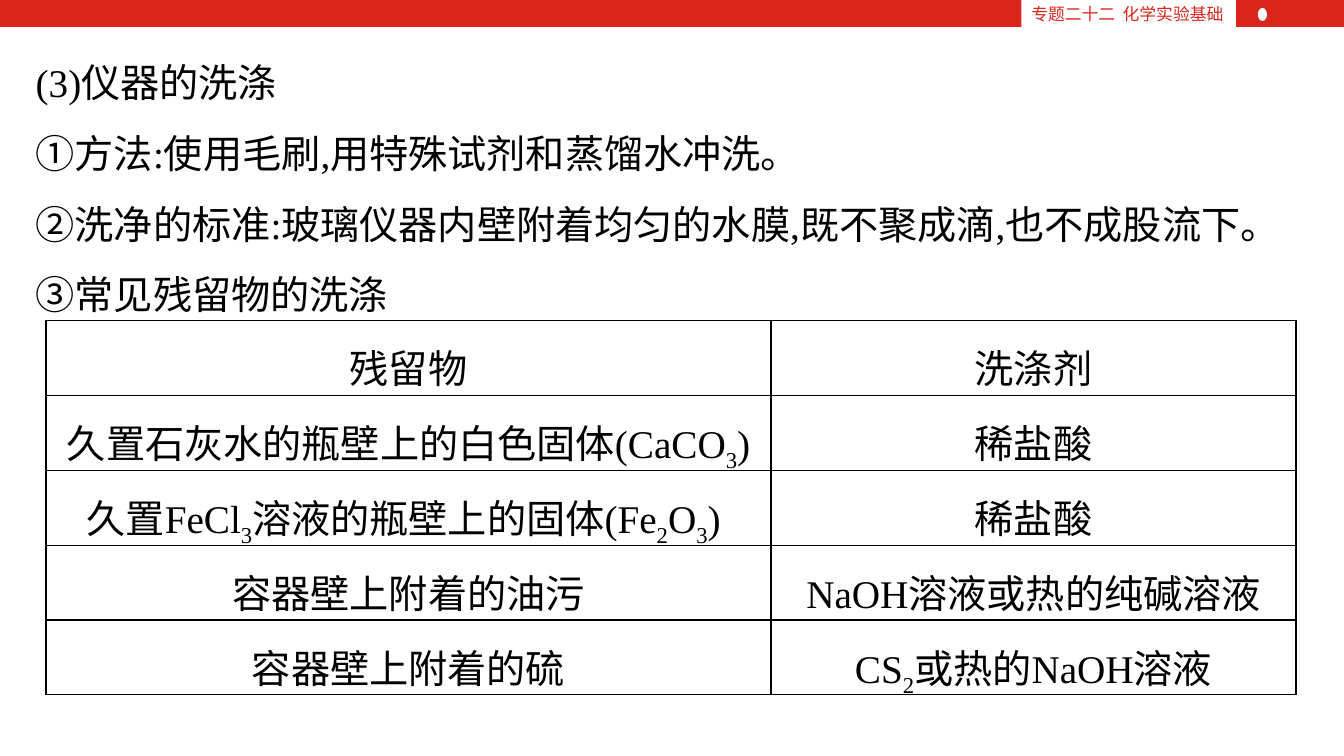
from dataclasses import dataclass
from itertools import groupby

from lxml import etree
from pptx import Presentation
from pptx.dml.color import RGBColor
from pptx.enum.shapes import MSO_SHAPE
from pptx.enum.text import MSO_ANCHOR, MSO_AUTO_SIZE, PP_ALIGN
from pptx.oxml.ns import qn
from pptx.util import Cm, Pt

RECTANGLE = MSO_SHAPE.RECTANGLE
OVAL = MSO_SHAPE.OVAL
MIDDLE = MSO_ANCHOR.MIDDLE
CENTER = PP_ALIGN.CENTER
LEFT = PP_ALIGN.LEFT
GROW = MSO_AUTO_SIZE.SHAPE_TO_FIT_TEXT

FONT = "Times New Roman"
RED = "DA251C"
WHITE = "FFFFFF"
BLACK = "000000"
BODY_SIZE = 28
PAGE_WIDTH = 33.87
PAGE_HEIGHT = 19.05
BAR_HEIGHT = 0.68
COLUMN_WIDTHS = (18.27, 13.23)
TABLE_HEIGHT = 9.43
BORDERS = ("a:lnL", "a:lnR", "a:lnT", "a:lnB")


@dataclass(frozen=True)
class HeaderShape:
    left: float
    top: float
    width: float
    height: float
    color: str
    kind: MSO_SHAPE = RECTANGLE
    label: str = ""


@dataclass(frozen=True)
class Residue:
    name: str
    cleaner: str


HEADER = (
    HeaderShape(0, 0, PAGE_WIDTH, BAR_HEIGHT, RED),
    HeaderShape(31.7, 0.2, 0.23, 0.33, WHITE, OVAL),
    HeaderShape(25.74, 0, 5.41, BAR_HEIGHT, WHITE, label="专题二十二  化学实验基础"),
)
NOTES = (
    "(3)仪器的洗涤",
    "①方法:使用毛刷,用特殊试剂和蒸馏水冲洗。",
    "②洗净的标准:玻璃仪器内壁附着均匀的水膜,既不聚成滴,也不成股流下。",
    "③常见残留物的洗涤",
)
RESIDUES = (
    Residue("残留物", "洗涤剂"),
    Residue("久置石灰水的瓶壁上的白色固体(CaCO3)", "稀盐酸"),
    Residue("久置FeCl3溶液的瓶壁上的固体(Fe2O3) ", "稀盐酸"),
    Residue("容器壁上附着的油污", "NaOH溶液或热的纯碱溶液"),
    Residue("容器壁上附着的硫", "CS2或热的NaOH溶液"),
)


def rgb(color: str) -> RGBColor:
    return RGBColor.from_string(color)


def style_paragraph(paragraph, size: float, color: str, align=LEFT, spacing: float = 1) -> None:
    paragraph.alignment = align
    paragraph.line_spacing = spacing
    paragraph.font.name = FONT
    paragraph.font.size = Pt(size)
    paragraph.font.color.rgb = rgb(color)


def add_header_shape(page, item: HeaderShape) -> None:
    shape = page.shapes.add_shape(
        item.kind, Cm(item.left), Cm(item.top), Cm(item.width), Cm(item.height)
    )
    shape.shadow.inherit = False
    shape.fill.solid()
    shape.fill.fore_color.rgb = rgb(item.color)
    shape.line.fill.background()
    if item.label:
        frame = shape.text_frame
        frame.vertical_anchor = MIDDLE
        frame.text = item.label
        style_paragraph(frame.paragraphs[0], 12, RED)


def add_notes(page) -> None:
    box = page.shapes.add_textbox(Cm(0.65), Cm(0.76), Cm(32.56), Cm(7.44))
    frame = box.text_frame
    frame.word_wrap = True
    frame.auto_size = GROW
    frame.text = "\n".join(NOTES)
    for paragraph in frame.paragraphs:
        style_paragraph(paragraph, BODY_SIZE, BLACK, spacing=1.5)


def add_formula_text(paragraph, text: str) -> None:
    for is_subscript, letters in groupby(text, str.isdigit):
        span = paragraph.add_run()
        span.text = "".join(letters)
        if is_subscript:
            span._r.get_or_add_rPr().set("baseline", "-25000")


def draw_borders(cell) -> None:
    properties = cell._tc.get_or_add_tcPr()
    for border in BORDERS:
        line = etree.SubElement(properties, qn(border), w=str(Pt(1)))
        fill = etree.SubElement(line, qn("a:solidFill"))
        etree.SubElement(fill, qn("a:srgbClr"), val=BLACK)


def fill_cell(cell, text: str) -> None:
    cell.margin_left = cell.margin_right = cell.margin_top = cell.margin_bottom = 0
    cell.vertical_anchor = MIDDLE
    draw_borders(cell)
    cell.fill.solid()
    cell.fill.fore_color.rgb = rgb(WHITE)
    paragraph = cell.text_frame.paragraphs[0]
    add_formula_text(paragraph, text)
    style_paragraph(paragraph, BODY_SIZE, BLACK, CENTER, 1.3)


def add_residue_table(page) -> None:
    row_count = len(RESIDUES)
    table = page.shapes.add_table(
        row_count, len(COLUMN_WIDTHS), Cm(1.16), Cm(8.08),
        Cm(sum(COLUMN_WIDTHS)), Cm(TABLE_HEIGHT),
    ).table
    for column, width in zip(table.columns, COLUMN_WIDTHS):
        column.width = Cm(width)
    for row, residue in zip(table.rows, RESIDUES):
        row.height = Cm(TABLE_HEIGHT / row_count)
        for cell, text in zip(row.cells, (residue.name, residue.cleaner)):
            fill_cell(cell, text)


def main() -> None:
    deck = Presentation()
    deck.slide_width = Cm(PAGE_WIDTH)
    deck.slide_height = Cm(PAGE_HEIGHT)
    page = deck.slides.add_slide(deck.slide_layouts[6])
    for item in HEADER:
        add_header_shape(page, item)
    add_notes(page)
    add_residue_table(page)
    deck.save("out.pptx")


if __name__ == "__main__":
    main()
